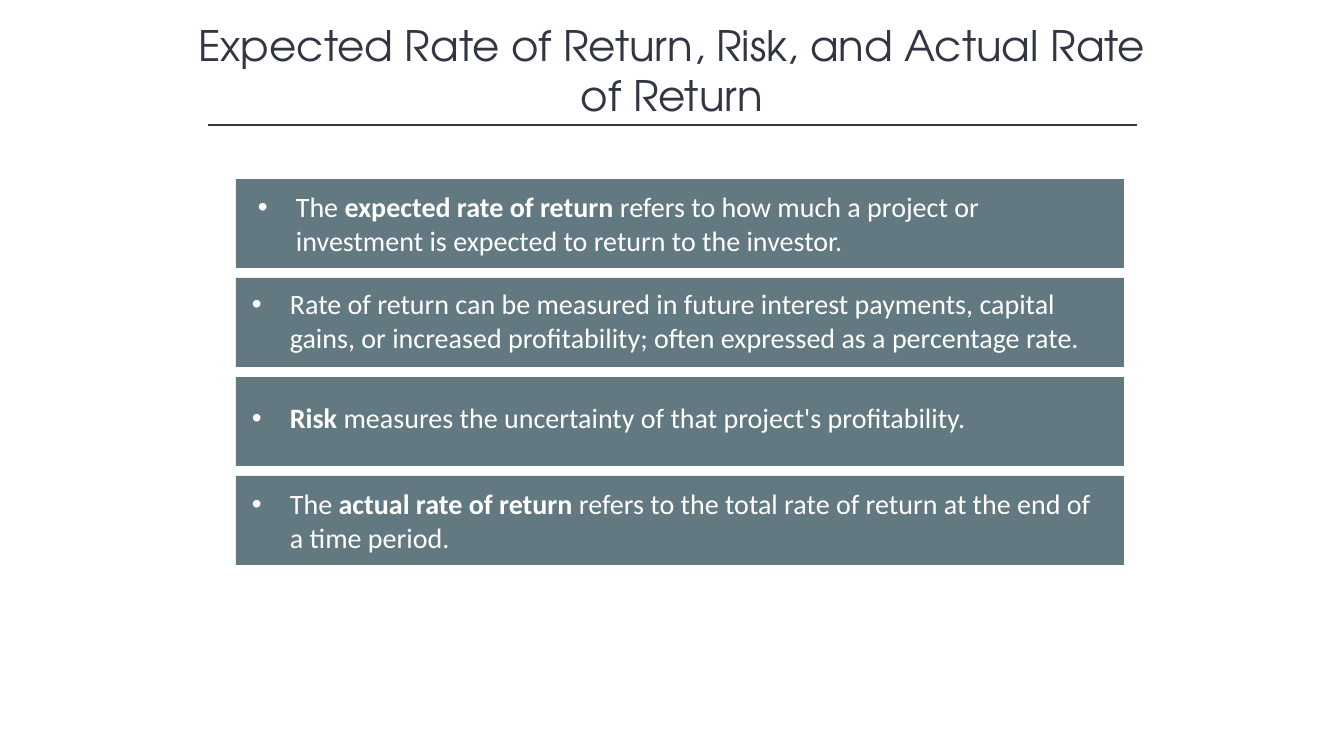
from dataclasses import dataclass
from typing import Any

import lxml.etree
import pptx
import pptx.dml.color
import pptx.enum.shapes
import pptx.enum.text
import pptx.oxml.ns
import pptx.util

EMU_PER_PX = 914400 / 100.8
INK, SLATE, WHITE = "323542", "627981", "FFFFFF"
TITLE_FONT, BODY_FONT = "TeX Gyre Adventor", "Calibri"
BAND_LEFT, BAND_TOP, BAND_WIDTH, BAND_HEIGHT, BAND_PITCH = 236, 179, 888, 89, 99
TEXT_WIDTH, BULLET_INDENT = 861, 38


@dataclass
class Statement:
    """One banded bullet; text is placed relative to its band."""
    spans: list[tuple[str, bool]]  # wording, bold
    text_left: int
    text_top: int
    text_height: int


STATEMENTS = [
    Statement([("The ", False), ("expected rate of return ", True),
               ("refers to how much a project or investment is expected "
                "to return to the investor.", False)], 12, 6, 78),
    Statement([("Rate of return can be measured in future interest payments, "
                "capital gains, or increased profitability; often expressed "
                "as a percentage rate.", False)], 6, 4, 78),
    Statement([("Risk", True),
               (" measures the uncertainty of that project's profitability.",
                False)], 6, 19, 44),
    Statement([("The ", False), ("actual rate of return ", True),
               ("refers to the total rate of return at the end of a time "
                "period.", False)], 6, 6, 78),
]


def px(length: int) -> pptx.util.Emu:
    return pptx.util.Emu(round(length * EMU_PER_PX))


def colour(value: str) -> pptx.dml.color.RGBColor:
    return pptx.dml.color.RGBColor.from_string(value)


def add_text(para: Any, text: str, *, font: str, size: int, ink: str,
             bold: bool = False) -> None:
    span = para.add_run()
    span.text = text
    span.font.name = font
    span.font.size = pptx.util.Pt(size)
    span.font.bold = bold
    span.font.color.rgb = colour(ink)


def add_bullet(para: Any) -> None:
    properties = para._p.get_or_add_pPr()
    properties.set("marL", str(px(BULLET_INDENT)))
    properties.set("indent", str(-px(BULLET_INDENT)))
    for tag, name, value in (("a:buFont", "typeface", "Arial"),
                             ("a:buChar", "char", "•")):
        mark = lxml.etree.SubElement(properties, pptx.oxml.ns.qn(tag))
        mark.set(name, value)


def add_block(group: Any, left: int, top: int, width: int, height: int) -> Any:
    block = group.shapes.add_shape(pptx.enum.shapes.MSO_SHAPE.RECTANGLE,
                                   px(left), px(top), px(width), px(height))
    block.shadow.inherit = False
    block.fill.solid()
    block.fill.fore_color.rgb = colour(SLATE)
    block.line.fill.background()
    return block


def add_title(page: Any, text: str) -> None:
    title = page.shapes.title
    title.left, title.top = px(168), px(14)
    title.width, title.height = px(1008), px(112)
    frame = title.text_frame
    frame.word_wrap = True
    frame.vertical_anchor = pptx.enum.text.MSO_ANCHOR.MIDDLE
    para = frame.paragraphs[0]
    para.alignment = pptx.enum.text.PP_ALIGN.CENTER
    add_text(para, text, font=TITLE_FONT, size=30, ink=INK)


def add_rule(page: Any, left: int, right: int, top: int) -> None:
    rule = page.shapes.add_connector(pptx.enum.shapes.MSO_CONNECTOR.STRAIGHT,
                                     px(left), px(top), px(right), px(top))
    rule.line.color.rgb = colour(INK)
    rule.line.width = pptx.util.Pt(1)
    lxml.etree.SubElement(rule._element.spPr, pptx.oxml.ns.qn("a:effectLst"))


def add_statement(page: Any, statement: Statement, top: int) -> None:
    group = page.shapes.add_group_shape()
    add_block(group, BAND_LEFT, top, BAND_WIDTH, BAND_HEIGHT)
    box = add_block(group, BAND_LEFT + statement.text_left,
                    top + statement.text_top, TEXT_WIDTH, statement.text_height)
    frame = box.text_frame
    frame.word_wrap = True
    frame.vertical_anchor = pptx.enum.text.MSO_ANCHOR.TOP
    para = frame.paragraphs[0]
    para.alignment = pptx.enum.text.PP_ALIGN.LEFT
    add_bullet(para)
    for text, bold in statement.spans:
        add_text(para, text, font=BODY_FONT, size=20, ink=WHITE, bold=bold)


def main() -> None:
    deck = pptx.Presentation()
    deck.slide_width, deck.slide_height = px(1344), px(756)
    page = deck.slides.add_slide(deck.slide_layouts.get_by_name("Title Only"))

    # Heading
    add_title(page, "Expected Rate of Return, Risk, and Actual Rate of Return")
    add_rule(page, 208, 1137, 125)

    # Evenly spaced bands
    for index, statement in enumerate(STATEMENTS):
        add_statement(page, statement, BAND_TOP + index * BAND_PITCH)

    deck.save("out.pptx")


if __name__ == "__main__":
    main()
